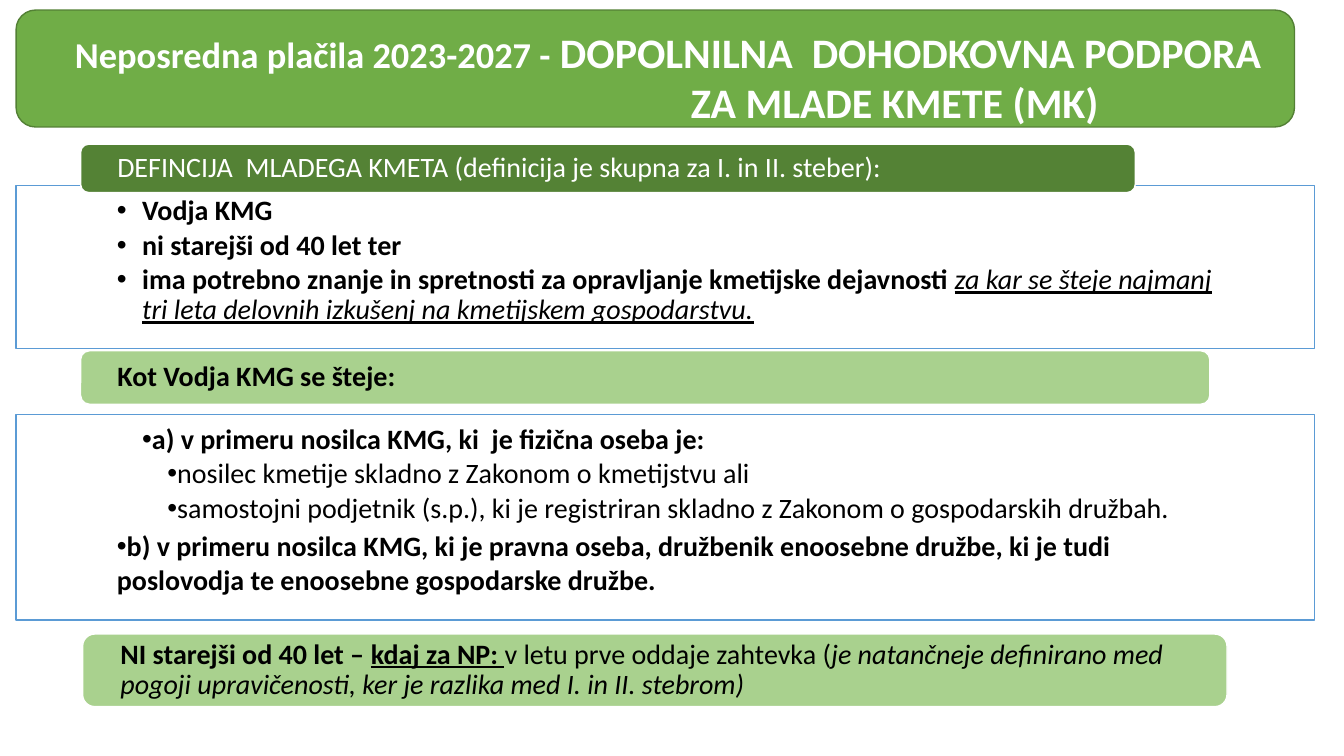
from dataclasses import dataclass

from lxml.etree import SubElement
from pptx import Presentation
from pptx.dml.color import RGBColor
from pptx.enum.shapes import MSO_SHAPE as Preset
from pptx.enum.text import MSO_ANCHOR as Anchor, MSO_AUTO_SIZE as AutoSize, PP_ALIGN as Align
from pptx.oxml.ns import qn
from pptx.shapes.base import BaseShape
from pptx.slide import Slide
from pptx.text.text import TextFrame, _Paragraph as Paragraph
from pptx.util import Inches, Pt

WIDTH, HEIGHT = Inches(13.33), Inches(7.5)
FONT = "Calibri"
WHITE = RGBColor(0xFF, 0xFF, 0xFF)
BLACK = RGBColor(0, 0, 0)
GREEN = RGBColor(0x70, 0xAD, 0x47)
DARK_GREEN = RGBColor(0x54, 0x82, 0x35)
LIGHT_GREEN = RGBColor(0xA9, 0xD1, 0x8E)
EDGE_GREEN = RGBColor(0x53, 0x80, 0x35)
BLUE = RGBColor(0x5B, 0x9B, 0xD5)


@dataclass(frozen=True)
class Box:
    """Position and size in percent of the slide."""
    left: float
    top: float
    width: float
    height: float

    def place(self, shape: BaseShape) -> None:
        shape.left, shape.width = (int(WIDTH * share / 100) for share in (self.left, self.width))
        shape.top, shape.height = (int(HEIGHT * share / 100) for share in (self.top, self.height))


@dataclass(frozen=True)
class Span:
    text: str
    bold: bool = False
    italic: bool = False
    underline: bool = False
    size: int = 20


@dataclass(frozen=True)
class Line:
    spans: tuple[Span, ...]
    margin: float = 0
    indent: float = 0
    spacing: float = 0.9
    after: float = 3


@dataclass(frozen=True)
class Panel:
    box: Box
    lines: tuple[Line, ...]


@dataclass(frozen=True)
class Banner:
    box: Box
    fill: RGBColor
    edge: RGBColor = WHITE
    color: RGBColor = BLACK
    spans: tuple[Span, ...] = ()


TITLE_BOX = Box(4.58, 2.8, 91, 14.8)
TITLE_LINES = (
    Line((Span("Neposredna plačila 2023-2027 - ", bold=True, size=26),
          Span("DOPOLNILNA  DOHODKOVNA PODPORA ", bold=True, size=30)), spacing=1, after=0),
    Line((Span("ZA MLADE KMETE (MK)", bold=True, size=30),), margin=4.4, spacing=1, after=0),
)
PANELS = (
    Panel(Box(1.2, 24.53, 96.62, 21.6), (
        Line((Span("Vodja KMG", bold=True),), 0.25, -0.25),
        Line((Span("ni starejši od 40 let ter", bold=True),), 0.25, -0.25),
        Line((Span("ima potrebno znanje in spretnosti za opravljanje kmetijske dejavnosti ", bold=True),
              Span("za kar se šteje najmanj tri leta delovnih izkušenj na kmetijskem gospodarstvu.",
                   italic=True, underline=True)), 0.25, -0.25),
    )),
    Panel(Box(1.2, 54.8, 96.62, 27.2), (
        Line((Span("a) v primeru nosilca KMG, ki  je fizična oseba je:", bold=True),), 0.25),
        Line((Span("nosilec kmetije skladno z Zakonom o kmetijstvu ali"),), 0.5),
        Line((Span("samostojni podjetnik (s.p.), ki je registriran skladno z Zakonom "
                   "o gospodarskih družbah."),), 0.5),
        Line((Span("b) v primeru nosilca KMG, ki je pravna oseba, družbenik enoosebne družbe, "
                   "ki je tudi poslovodja te enoosebne gospodarske družbe.", bold=True),),
             spacing=1, after=0),
    )),
)
BANNERS = (
    Banner(Box(1.2, 1.33, 95.12, 15.47), GREEN, EDGE_GREEN),
    Banner(Box(6, 19.07, 78.47, 6.4), DARK_GREEN, color=WHITE, spans=(
        Span("DEFINCIJA  MLADEGA KMETA (definicija je skupna za I. in II. steber):"),)),
    Banner(Box(6, 46.4, 84.02, 7.07), LIGHT_GREEN, spans=(
        Span("Kot Vodja KMG se šteje:", bold=True),)),
    Banner(Box(6.15, 83.87, 85.15, 9.6), LIGHT_GREEN, spans=(
        Span("NI starejši od 40 let – ", bold=True),
        Span("kdaj za NP: ", bold=True, underline=True),
        Span("v letu prve oddaje zahtevka ("),
        Span("je natančneje definirano med pogoji upravičenosti, "
             "ker je razlika med I. in II. stebrom)", italic=True))),
)


def set_frame(frame: TextFrame, anchor: Anchor, side: float, top: float, bottom: float) -> None:
    frame.word_wrap = True
    frame.auto_size = AutoSize.NONE
    frame.vertical_anchor = anchor
    frame.margin_left = frame.margin_right = Inches(side)
    frame.margin_top, frame.margin_bottom = Inches(top), Inches(bottom)


def write_line(para: Paragraph, line: Line, color: RGBColor, align: Align) -> None:
    para.alignment = align
    para.line_spacing = line.spacing
    para.space_before, para.space_after = Pt(0), Pt(line.after)
    properties = para._p.get_or_add_pPr()
    properties.set("marL", str(Inches(line.margin)))
    properties.set("indent", str(Inches(line.indent)))
    for span in line.spans:
        run = para.add_run()
        run.text = span.text
        font = run.font
        font.name, font.size, font.color.rgb = FONT, Pt(span.size), color
        font.bold, font.italic, font.underline = span.bold, span.italic, span.underline


def write_lines(frame: TextFrame, lines: tuple[Line, ...], color: RGBColor,
                align: Align = Align.LEFT, bullet: str = "") -> None:
    for number, line in enumerate(lines):
        para = frame.add_paragraph() if number else frame.paragraphs[0]
        write_line(para, line, color, align)
        if bullet:
            SubElement(para._p.pPr, qn("a:buChar")).set("char", bullet)


def fill_panel(body: BaseShape, panel: Panel) -> None:
    panel.box.place(body)
    body.fill.solid()
    body.fill.fore_color.rgb = WHITE
    body.line.color.rgb, body.line.width = BLUE, Pt(1)
    set_frame(body.text_frame, Anchor.TOP, 1, 0.11, 0.16)
    write_lines(body.text_frame, panel.lines, BLACK, bullet="•")


def draw_banner(page: Slide, banner: Banner) -> None:
    shape = page.shapes.add_shape(Preset.ROUNDED_RECTANGLE, 0, 0, 0, 0)
    banner.box.place(shape)
    shape.shadow.inherit = False
    shape.fill.solid()
    shape.fill.fore_color.rgb = banner.fill
    shape.line.color.rgb, shape.line.width = banner.edge, Pt(1)
    if banner.spans:
        set_frame(shape.text_frame, Anchor.MIDDLE, 0.34, 0, 0)
        write_lines(shape.text_frame, (Line(banner.spans, after=0),), banner.color)


def write_title(page: Slide) -> None:
    title = page.shapes.title
    TITLE_BOX.place(title)
    set_frame(title.text_frame, Anchor.TOP, 0.1, 0.05, 0.05)
    write_lines(title.text_frame, TITLE_LINES, WHITE, Align.CENTER)
    page.shapes._spTree.append(title._element)


def main() -> None:
    deck = Presentation()
    deck.slide_width, deck.slide_height = WIDTH, HEIGHT
    page = deck.slides.add_slide(deck.slide_layouts.get_by_name("Two Content"))
    for body, panel in zip(list(page.placeholders)[1:], PANELS):
        fill_panel(body, panel)
    for banner in BANNERS:
        draw_banner(page, banner)
    write_title(page)
    deck.save("out.pptx")


if __name__ == "__main__":
    main()
